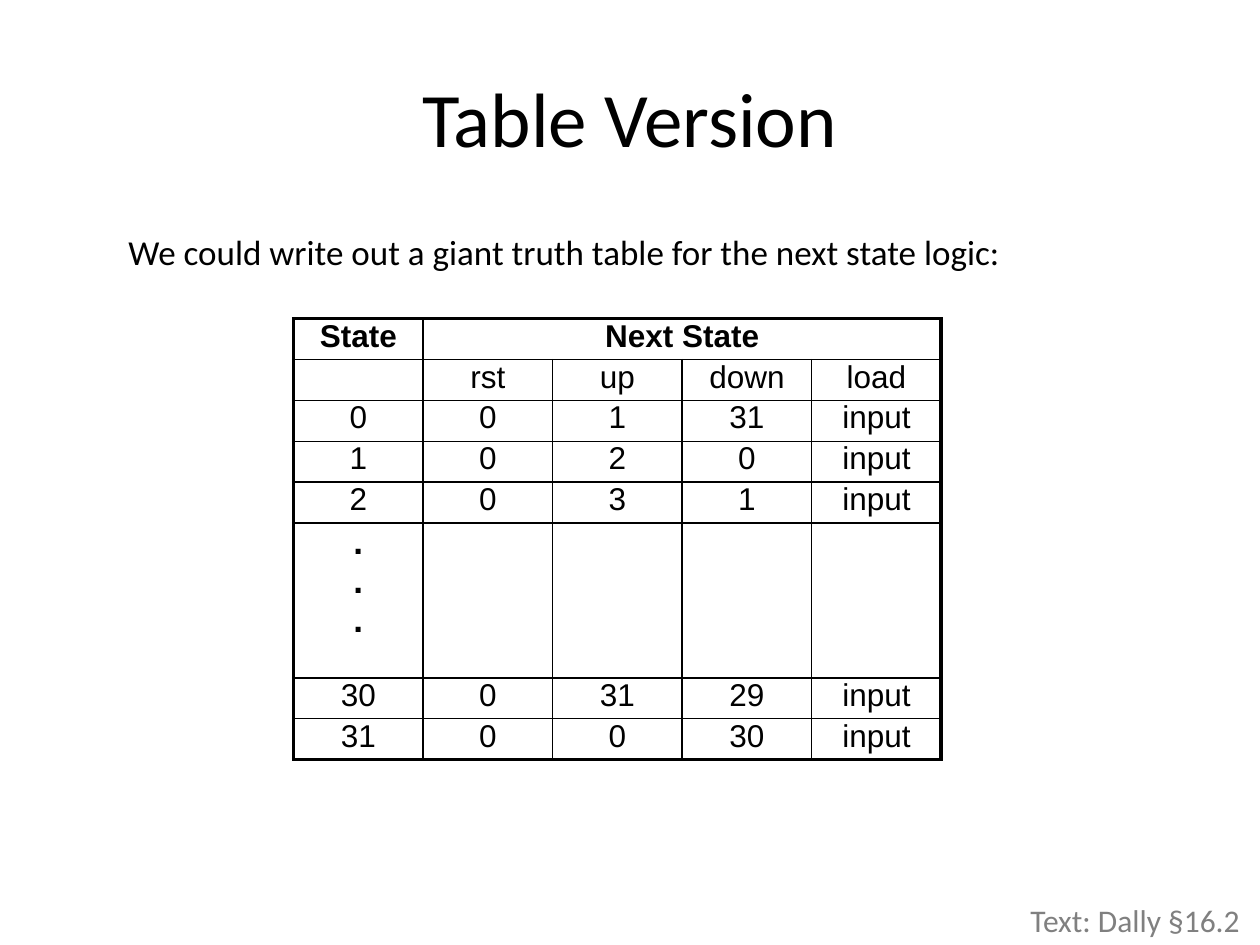
from lxml import etree
from pptx import Presentation
from pptx.dml.color import RGBColor
from pptx.enum.text import MSO_ANCHOR, PP_ALIGN
from pptx.oxml.ns import qn
from pptx.util import Inches, Pt

CENTER = PP_ALIGN.CENTER
MIDDLE = MSO_ANCHOR.MIDDLE
COLORS = {"ink": "000000", "note": "808080"}
THIN, THICK = Pt(1), Pt(2.25)
DOTS = ".\n.\n."
DOT_ROW = 5
ROWS = [
    ["State", "Next State", "", "", ""],
    ["", "rst", "up", "down", "load"],
    ["0", "0", "1", "31", "input"],
    ["1", "0", "2", "0", "input"],
    ["2", "0", "3", "1", "input"],
    [DOTS, "", "", "", ""],
    ["30", "0", "31", "29", "input"],
    ["31", "0", "0", "30", "input"],
]


def style(frame, size, font, color="ink", bold=False, align=None):
    """Format every run in a text frame."""
    for para in frame.paragraphs:
        para.alignment = align
        for run in para.runs:
            run.font.size = Pt(size)
            run.font.name = font
            run.font.bold = bold
            run.font.color.rgb = RGBColor.from_string(COLORS[color])


def add_title(slide, box, text):
    """Fill and place the title placeholder."""
    title = slide.shapes.title
    title.left, title.top, title.width, title.height = map(Inches, box)
    title.text_frame.text = text
    title.text_frame.vertical_anchor = MIDDLE
    style(title.text_frame, 44, "Calibri", align=CENTER)


def add_text(slide, box, text, size, color, wrap):
    """Add a single line of plain text."""
    frame = slide.shapes.add_textbox(*map(Inches, box)).text_frame
    frame.word_wrap = wrap
    frame.text = text
    style(frame, size, "Calibri", color)


def add_edges(cell, widths):
    """Draw the left, right, top and bottom borders of a cell."""
    props = cell._tc.get_or_add_tcPr()
    for side, width in zip("LRTB", widths):
        line = etree.SubElement(props, qn(f"a:ln{side}"), w=str(int(width)))
        fill = etree.SubElement(line, qn("a:solidFill"))
        etree.SubElement(fill, qn("a:srgbClr"), val=COLORS["ink"])


def fill_cell(cell, text, bold):
    """Set the text, margins and fill of a cell."""
    cell.margin_left = cell.margin_right = 0
    cell.margin_top = cell.margin_bottom = 0
    cell.fill.background()
    cell.text_frame.text = text
    size = 20 if text == DOTS else 18
    style(cell.text_frame, size, "Arial", bold=bold, align=CENTER)


def add_states(slide, box, rows, tall):
    """Add the state table with one tall row and a thick frame."""
    count, wide = len(rows), len(rows[0])
    table = slide.shapes.add_table(count, wide, *map(Inches, box)).table
    table.first_row = table.horz_banding = False
    for col in table.columns:
        col.width = Inches(box[2] / wide)
    short = (box[3] - tall) / (count - 1)
    for r, row in enumerate(table.rows):
        row.height = Inches(tall if r == DOT_ROW else short)
    table.cell(0, 1).merge(table.cell(0, wide - 1))
    for r, texts in enumerate(rows):
        for c, text in enumerate(texts):
            cell = table.cell(r, c)
            outer = (c == 0, c + cell.span_width == wide,
                     r == 0, r == count - 1)
            add_edges(cell, [THICK if edge else THIN for edge in outer])
            fill_cell(cell, text, r in (0, DOT_ROW))


def main():
    """Build the slide and save it."""
    deck = Presentation()
    deck.slide_width, deck.slide_height = Inches(10), Inches(7.5)
    slide = deck.slides.add_slide(deck.slide_layouts[5])
    add_title(slide, (0.5, 0.3, 9, 1.25), "Table Version")
    add_states(slide, (2.33, 2.53, 5.14, 3.5), ROWS, 1.23)
    add_text(slide, (8.08, 7.1, 1.91, 0.4), "Text: Dally §16.2",
             18, "note", True)
    add_text(slide, (0.92, 1.78, 7.19, 0.44),
             "We could write out a giant truth table for the next state logic:",
             20, "ink", False)
    deck.save("out.pptx")


if __name__ == "__main__":
    main()
